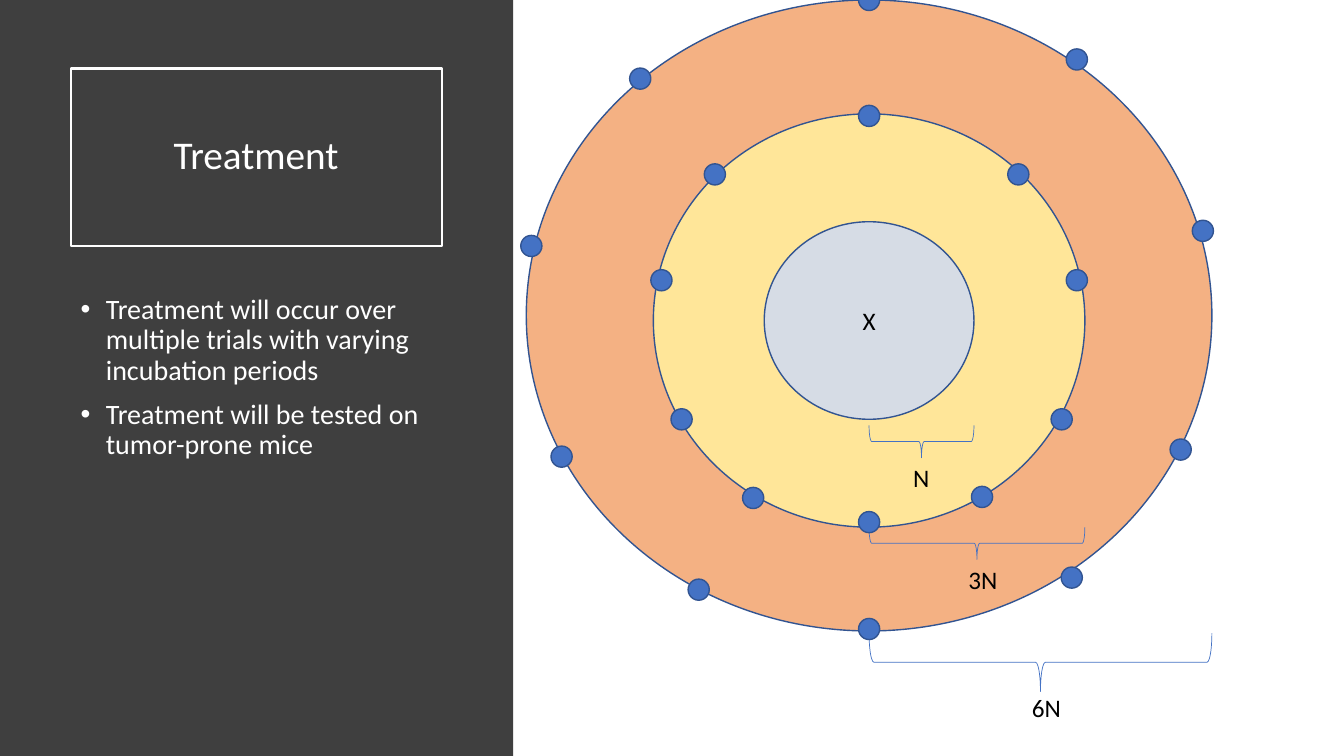
from lxml.etree import SubElement
from pptx import Presentation
from pptx.dml.color import RGBColor
from pptx.enum.shapes import MSO_SHAPE
from pptx.enum.text import MSO_ANCHOR, MSO_AUTO_SIZE, PP_ALIGN
from pptx.oxml.ns import qn
from pptx.util import Inches, Pt

TITLE = "Treatment"
BULLETS = [
    "Treatment will occur over multiple trials with varying incubation periods",
    "Treatment will be tested on tumor-prone mice",
]
WIDTH, HEIGHT = 13.33, 7.5
PANEL_WIDTH = 5.09
COLUMN_LEFT, COLUMN_WIDTH = 0.7, 3.68
CENTER_X = 8.62
DOT_SIZE = 0.21

# (center y, radius x, radius y, fill, brace gap, brace depth, label, label shift x, label shift y)
RINGS = [
    (3.13, 3.4, 3.13, "F4B183", 0.02, 0.58, "6N", 0.06, -0.04),
    (3.18, 2.14, 2.05, "FFE699", 0, 0.32, "3N", 0.06, 0),
    (3.18, 1.04, 0.98, "D6DCE5", 0.06, 0.32, "N", 0, 0),
]
INNER_DOTS = [
    (0, -2.03), (1.48, -1.45), (2.06, -0.4), (1.91, 0.98), (1.12, 1.75),
    (0, 2), (-1.15, 1.76), (-1.86, 0.98), (-2.06, -0.4), (-1.53, -1.45),
]
OUTER_DOTS = [
    (0, -3.18), (2.06, -2.59), (3.31, -0.89), (3.09, 1.28), (2.01, 2.55),
    (0, 3.06), (-1.69, 2.67), (-3.05, 1.35), (-3.35, -0.74), (-2.27, -2.4),
]
DOTS_CENTER_Y = 3.18


def color(hex_code):
    return RGBColor.from_string(hex_code)


def write(p, text, size=18, fill="000000", align=None, spacing=None, before=0):
    r = p.add_run()
    r.text = text
    r.font.size, r.font.name = Pt(size), "Calibri"
    r.font.color.rgb = color(fill)
    p.alignment, p.line_spacing, p.space_before = align, spacing, Pt(before)


def place(sp, left, top, width, height):
    sp.left, sp.top = Inches(left), Inches(top)
    sp.width, sp.height = Inches(width), Inches(height)


def add_centered(slide, kind, x, y, width, height, fill=None, line=None, weight=1):
    sp = slide.shapes.add_shape(kind, Inches(x - width / 2), Inches(y - height / 2),
                                Inches(width), Inches(height))
    sp.shadow.inherit = False
    if fill:
        sp.fill.solid()
        sp.fill.fore_color.rgb = color(fill)
    else:
        sp.fill.background()
    if line:
        sp.line.color.rgb = color(line)
        sp.line.width = Pt(weight)
    else:
        sp.line.fill.background()
    return sp


def add_panel(slide):
    panel = add_centered(slide, MSO_SHAPE.RECTANGLE, PANEL_WIDTH / 2, HEIGHT / 2,
                         PANEL_WIDTH, HEIGHT, "3F3F3F")
    slide.shapes._spTree.insert(2, panel._element)

    title = slide.shapes.title
    place(title, COLUMN_LEFT, 0.68, COLUMN_WIDTH, 1.76)
    title.line.color.rgb = color("FFFFFF")
    title.line.width = Pt(1.5)
    tf = title.text_frame
    tf.vertical_anchor, tf.auto_size = MSO_ANCHOR.MIDDLE, MSO_AUTO_SIZE.NONE
    write(tf.paragraphs[0], TITLE, 28, "FFFFFF", PP_ALIGN.CENTER, 0.9)

    body = slide.placeholders[1]
    place(body, COLUMN_LEFT, 2.88, COLUMN_WIDTH, 3.74)
    tf = body.text_frame
    tf.auto_size = MSO_AUTO_SIZE.NONE
    for i, text in enumerate(BULLETS):
        p = tf.add_paragraph() if i else tf.paragraphs[0]
        write(p, text, 20, "FFFFFF", PP_ALIGN.LEFT, 0.9, 10)
        pPr = p._p.get_or_add_pPr()
        pPr.set("marL", str(Inches(0.25)))
        pPr.set("indent", str(-Inches(0.25)))
        SubElement(pPr, qn("a:buFont")).set("typeface", "Arial")
        SubElement(pPr, qn("a:buChar")).set("char", "•")


def add_rings(slide):
    for y, rx, ry, fill, gap, depth, label, dx, dy in RINGS:
        ring = add_centered(slide, MSO_SHAPE.OVAL, CENTER_X, y, 2 * rx, 2 * ry, fill, "325491")
        brace_top = y + ry + gap
        brace_x = CENTER_X + rx / 2
        brace = add_centered(slide, MSO_SHAPE.LEFT_BRACE, brace_x, brace_top + depth / 2,
                             depth, rx, line="4472C4", weight=0.5)
        brace.rotation = 270
        box_width = 0.24 + 0.125 * len(label)
        box = slide.shapes.add_textbox(Inches(brace_x + dx - box_width / 2),
                                       Inches(brace_top + depth + dy),
                                       Inches(box_width), Inches(0.4))
        box.text_frame.word_wrap = False
        write(box.text_frame.paragraphs[0], label)
    ring.text_frame.vertical_anchor = MSO_ANCHOR.MIDDLE
    write(ring.text_frame.paragraphs[0], "X", align=PP_ALIGN.CENTER)


def add_dots(slide):
    for dx, dy in INNER_DOTS + OUTER_DOTS:
        add_centered(slide, MSO_SHAPE.OVAL, CENTER_X + dx, DOTS_CENTER_Y + dy,
                     DOT_SIZE, DOT_SIZE, "4472C4", "325491")


def main():
    prs = Presentation()
    prs.slide_width, prs.slide_height = Inches(WIDTH), Inches(HEIGHT)
    slide = prs.slides.add_slide(prs.slide_layouts[1])
    add_panel(slide)
    add_rings(slide)
    add_dots(slide)
    prs.save("out.pptx")


if __name__ == "__main__":
    main()
